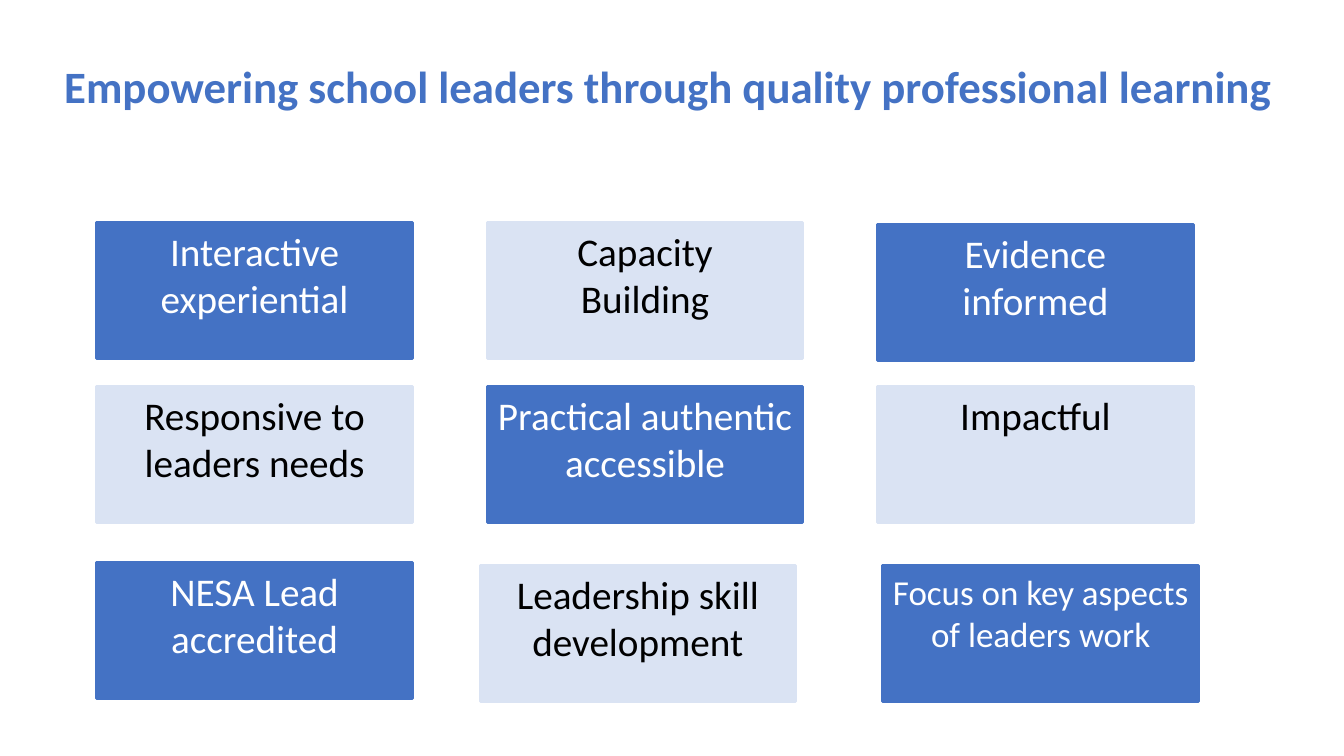
from pptx import Presentation
from pptx import util as u
from pptx.dml.color import RGBColor
from pptx.enum import shapes, text

BLUE = RGBColor(0x44, 0x72, 0xC4)
PALE = RGBColor(0xDA, 0xE3, 0xF3)
WHITE = RGBColor(0xFF, 0xFF, 0xFF)
BLACK = RGBColor(0x00, 0x00, 0x00)
FONT = "Calibri"

# Tile grid, in centimetres
LEFT, COLUMN_STEP = 2.44, 9.84
ROW_TOPS = (5.61, 9.73, 14.17)
TILE_WIDTH, TILE_HEIGHT = 7.95, 3.43

TILES = (
    ("Interactive experiential", "Capacity\nBuilding", "Evidence informed"),
    ("Responsive to leaders needs", "Practical authentic accessible", "Impactful"),
    ("NESA Lead accredited", "Leadership skill development",
     "Focus on key aspects of leaders work"),
)
# Tiles set slightly off the grid: (row, column) -> (right, down)
OFFSETS = {(0, 2): (0, 0.05), (2, 1): (-0.18, 0.08), (2, 2): (0.13, 0.08)}
SMALLER_TEXT = {(2, 2): 25}


def format_text(paragraph, size, color, bold=False):
    for run in paragraph.runs:
        run.font.name = FONT
        run.font.size = u.Pt(size)
        run.font.bold = bold
        run.font.color.rgb = color


def add_title(slide, words):
    box = slide.shapes.add_textbox(u.Cm(1.37), u.Cm(1.02), u.Cm(31.32), u.Cm(2.46))
    frame = box.text_frame
    frame.word_wrap = True
    frame.vertical_anchor = text.MSO_ANCHOR.MIDDLE
    frame.text = words
    paragraph = frame.paragraphs[0]
    paragraph.line_spacing = 0.9
    format_text(paragraph, 32, BLUE, bold=True)


def add_tile(slide, row, column, words):
    right, down = OFFSETS.get((row, column), (0, 0))
    shape = slide.shapes.add_shape(
        shapes.MSO_SHAPE.RECTANGLE,
        u.Cm(LEFT + column * COLUMN_STEP + right), u.Cm(ROW_TOPS[row] + down),
        u.Cm(TILE_WIDTH), u.Cm(TILE_HEIGHT))
    # Blue and pale tiles alternate like a chessboard
    fill, ink = (PALE, BLACK) if (row + column) % 2 else (BLUE, WHITE)
    shape.shadow.inherit = False
    shape.fill.solid()
    shape.fill.fore_color.rgb = fill
    shape.line.color.rgb = fill
    shape.line.width = u.Pt(2.25)
    frame = shape.text_frame
    frame.word_wrap = True
    frame.vertical_anchor = text.MSO_ANCHOR.TOP
    frame.text = words
    for paragraph in frame.paragraphs:
        paragraph.alignment = text.PP_ALIGN.CENTER
        format_text(paragraph, SMALLER_TEXT.get((row, column), 28), ink)


def main():
    presentation = Presentation()
    presentation.slide_width = u.Cm(33.87)
    presentation.slide_height = u.Cm(19.05)
    slide = presentation.slides.add_slide(presentation.slide_layouts[6])

    # Heading
    add_title(slide, "Empowering school leaders through quality professional learning")

    # Quality tiles
    for row, labels in enumerate(TILES):
        for column, words in enumerate(labels):
            add_tile(slide, row, column, words)

    presentation.save("out.pptx")


if __name__ == "__main__":
    main()
